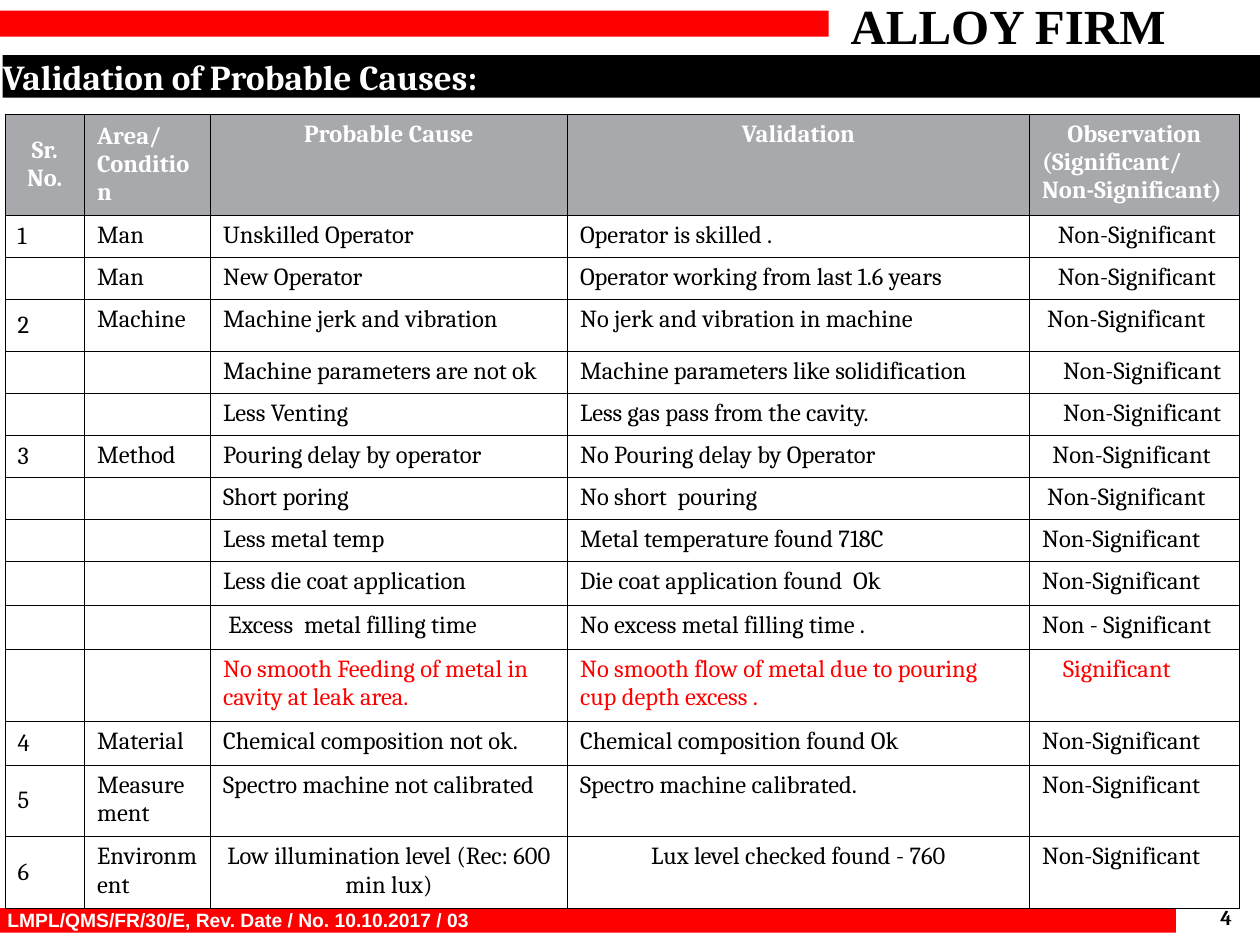
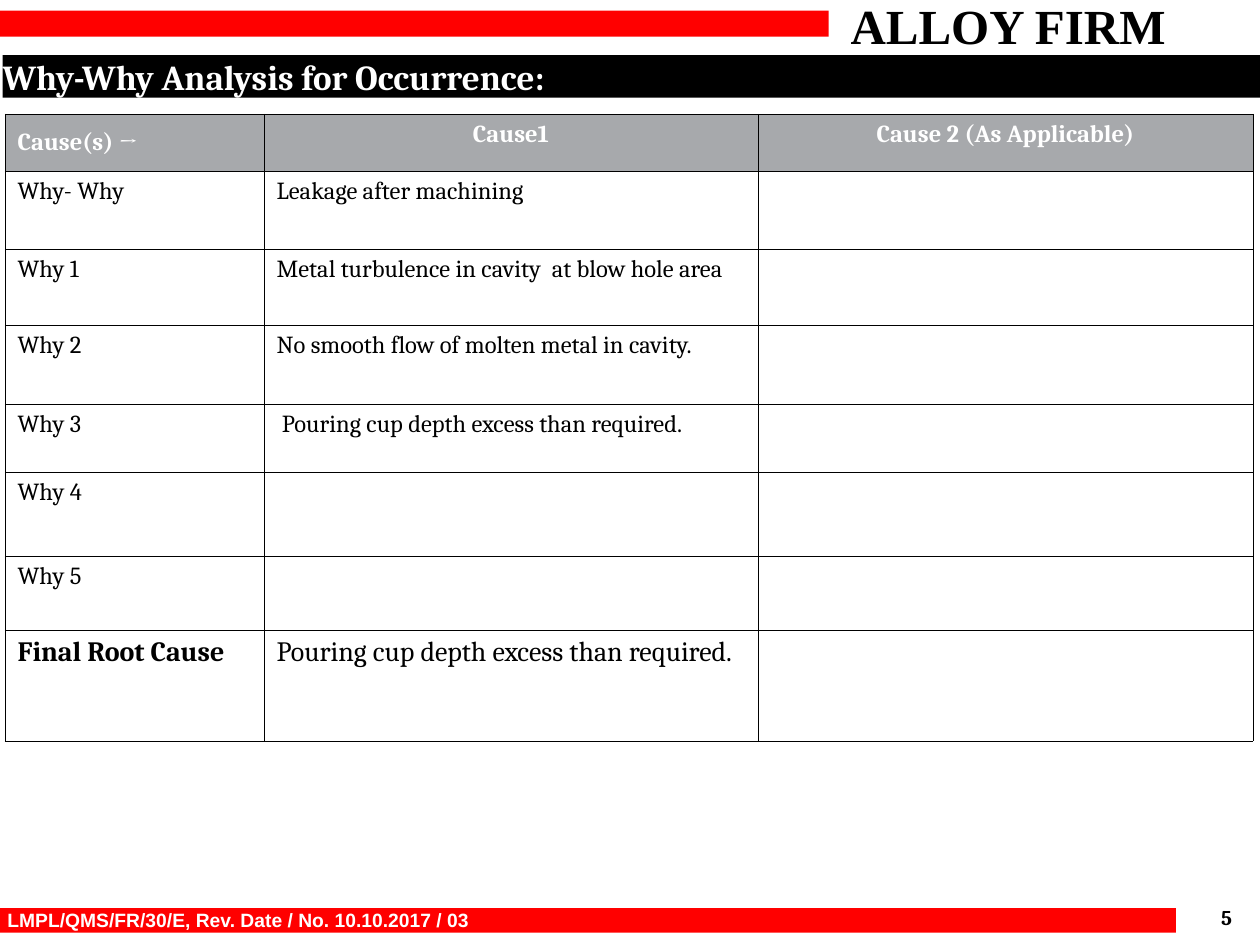
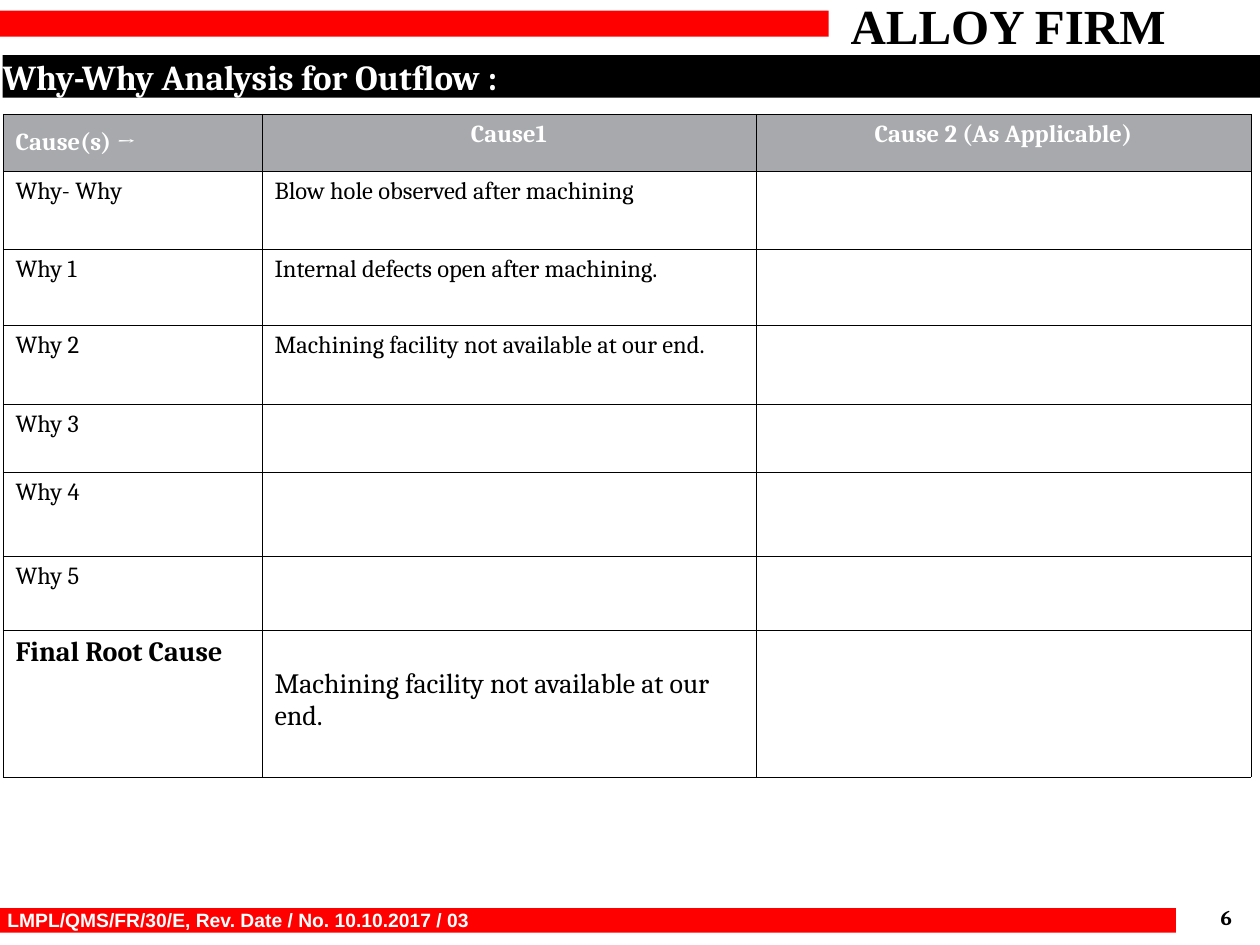
from dataclasses import dataclass
from functools import partial

from lxml.etree import SubElement
from pptx import Presentation
from pptx.dml.color import RGBColor
from pptx.enum.shapes import MSO_SHAPE
from pptx.enum.text import MSO_ANCHOR, PP_ALIGN
from pptx.oxml.ns import qn
from pptx.util import Pt


@dataclass(frozen=True)
class Theme:
    """Colours, fonts and type sizes shared by every slide."""
    red: str = "FF0000"
    black: str = "000000"
    white: str = "FFFFFF"
    grey: str = "A7A9AC"
    serif: str = "Cambria"
    sans: str = "Arial"
    brand_face: str = "Times New Roman"
    brand: float = 28
    title: float = 20
    root_cause: float = 16
    body: float = 14
    page: float = 12
    footer: float = 11
    rule: float = 0.25


THEME = Theme()


@dataclass(frozen=True)
class Box:
    """A region in points."""
    left: float
    top: float
    width: float
    height: float

    def inner(self, left, top, width, height):
        """Return the lengths of a part placed relative to this region."""
        return [Pt(v) for v in (self.left + left, self.top + top, width, height)]


@dataclass(frozen=True)
class Entry:
    """The content and format of one table cell."""
    text: str = ""
    size: float = THEME.body
    bold: bool = False
    color: str = THEME.black
    fill: str = THEME.white
    aligns: tuple = (PP_ALIGN.LEFT,)
    anchor: MSO_ANCHOR = MSO_ANCHOR.TOP
    indent: float = 0
    drop: float = 0


CENTER = (PP_ALIGN.CENTER,)
MIDDLE = MSO_ANCHOR.MIDDLE
Heading = partial(Entry, bold=True, color=THEME.white, fill=THEME.grey)
Alert = partial(Entry, color=THEME.red)

PAGE = Box(0, 0, 720, 540)
MASTHEAD = Box(0, 0, 720, 56)
FOOTER = Box(0, 515, 720, 25)
TABLE_TOP = 65.2

VALIDATION_COLUMNS = [45.4, 72, 204, 264, 120]
VALIDATION_HEIGHTS = [57.7, 24, 24, 29.7, *[24] * 5, 25.1, 25.1, 41.1, 25.1, 40.6, 41.1]
VALIDATION_HEADINGS = [
    Heading("Sr. No.", aligns=CENTER, anchor=MIDDLE),
    Heading("Area/Condition", anchor=MIDDLE),
    Heading("Probable Cause", aligns=CENTER),
    Heading("Validation", aligns=CENTER),
    Heading("Observation\n(Significant/\nNon-Significant)",
            aligns=(PP_ALIGN.CENTER, PP_ALIGN.LEFT)),
]
MINOR = "Non-Significant"
VALIDATIONS = [
    ("1", "Man", "Unskilled Operator", "Operator is skilled .", Entry(MINOR, indent=9)),
    ("", "Man", "New Operator", "Operator working from last 1.6 years", Entry(MINOR, indent=9)),
    ("2", "Machine", "Machine jerk and vibration", "No jerk and vibration in machine",
     Entry(MINOR, indent=3)),
    ("", "", "Machine parameters are not ok", "Machine parameters like solidification",
     Entry(MINOR, indent=12)),
    ("", "", "Less Venting", "Less gas pass from the cavity.", Entry(MINOR, indent=12)),
    ("3", "Method", "Pouring delay by operator", "No Pouring delay by Operator",
     Entry(MINOR, indent=6)),
    ("", "", "Short poring", "No short  pouring", Entry(MINOR, indent=3)),
    ("", "", "Less metal temp", "Metal temperature found 718C", MINOR),
    ("", "", "Less die coat application", "Die coat application found  Ok", MINOR),
    ("", "", Entry("Excess  metal filling time", indent=3), "No excess metal filling time .",
     "Non - Significant"),
    ("", "", Alert("No smooth Feeding of metal in cavity at leak area."),
     Alert("No smooth flow of metal due to pouring cup depth excess ."),
     Alert("Significant", indent=12)),
    ("4", "Material", "Chemical composition not ok.", "Chemical composition found Ok", MINOR),
    ("5", "Measurement", "Spectro machine not calibrated", "Spectro machine calibrated.", MINOR),
    ("6", "Environment", Entry("Low illumination level (Rec: 600 min lux)", aligns=CENTER),
     Entry("Lux level checked found - 760", aligns=CENTER), MINOR),
]

WHY_COLUMNS = [148, 282.3, 282.9]
WHY_HEIGHTS = [32.5, 44.6, 43.4, 45.1, 38.9, 48, 42.3]
WHY_HEADINGS = [
    Heading("Cause(s) →", anchor=MIDDLE),
    Heading("Cause1", aligns=CENTER),
    Heading("Cause 2 (As Applicable)", aligns=CENTER),
]
WHY_STEPS = ["Why- Why", *[f"Why {n}" for n in range(1, 6)]]
OCCURRENCE = [
    "Leakage after machining",
    "Metal turbulence in cavity  at blow hole area",
    "No smooth flow of molten metal in cavity.",
    Entry("Pouring cup depth excess than required.", indent=3),
    "",
    "",
    Entry("Pouring cup depth excess than required.", size=THEME.root_cause),
]
OUTFLOW = [
    "Blow hole observed after machining",
    "Internal defects open after machining.",
    "Machining facility not available at our end.",
    "",
    "",
    "",
    Entry("Machining facility not available at our end.", size=THEME.root_cause, drop=18.3),
]


def write(paragraph, text, size, color, face=THEME.serif, bold=True, align=PP_ALIGN.LEFT):
    """Put formatted text in a paragraph, or size the paragraph if it is empty."""
    paragraph.alignment = align
    if not text:
        SubElement(paragraph._p, qn("a:endParaRPr"), sz=str(int(size * 100)))
        return
    run = paragraph.add_run()
    run.text = text
    for name, value in {"size": Pt(size), "name": face, "bold": bold}.items():
        setattr(run.font, name, value)
    run.font.color.rgb = RGBColor.from_string(color)


def add_band(slide, place, color):
    """Add a plain filled band."""
    band = slide.shapes.add_shape(MSO_SHAPE.RECTANGLE, *place)
    band.shadow.inherit = False
    band.fill.solid()
    band.fill.fore_color.rgb = RGBColor.from_string(color)
    band.line.fill.background()
    return band


def set_frame(frame, inset=None, anchor=MSO_ANCHOR.TOP):
    """Set wrapping, anchor and optional equal insets, and return the first paragraph."""
    settings = {"word_wrap": True, "vertical_anchor": anchor}
    if inset is not None:
        settings |= {f"margin_{side}": Pt(inset) for side in ("left", "top", "right", "bottom")}
    for name, value in settings.items():
        setattr(frame, name, value)
    return frame.paragraphs[0]


def draw_masthead(slide, box, title):
    """Draw the company name, the red band and the title band."""
    company = slide.shapes.add_textbox(*box.inner(456, -5.8, 240, 42))
    write(set_frame(company.text_frame), "ALLOY FIRM", THEME.brand, THEME.black,
          THEME.brand_face, align=PP_ALIGN.CENTER)
    add_band(slide, box.inner(-0.5, 6, 474, 15), THEME.red)
    heading = add_band(slide, box.inner(1.5, 31.5, 718.5, 24.3), THEME.black)
    write(set_frame(heading.text_frame, 0, MIDDLE), title, THEME.title, THEME.white)


def draw_footer(slide, box, number):
    """Draw the red footer with the form reference and the page number."""
    add_band(slide, box.inner(0, 4, 672, 14), THEME.red)
    reference = slide.shapes.add_textbox(*box.inner(-2.9, 0.5, 647, 21))
    write(set_frame(reference.text_frame), "LMPL/QMS/FR/30/E, Rev. Date / No. 10.10.2017 / 03",
          THEME.footer, THEME.white, THEME.sans)
    page = slide.shapes.add_textbox(*box.inner(665, 2, 39, 14.4))
    write(set_frame(page.text_frame, 0), str(number), THEME.page, THEME.black,
          align=PP_ALIGN.RIGHT)


def rule_cell(cell):
    """Draw thin black borders around a cell."""
    properties = cell._tc.get_or_add_tcPr()
    for side in ("lnL", "lnR", "lnT", "lnB"):
        border = SubElement(properties, qn(f"a:{side}"), w=str(Pt(THEME.rule)))
        SubElement(SubElement(border, qn("a:solidFill")), qn("a:srgbClr"), val=THEME.black)


def fill_cell(cell, entry):
    """Write one entry into a table cell."""
    rule_cell(cell)
    cell.fill.solid()
    cell.fill.fore_color.rgb = RGBColor.from_string(entry.fill)
    settings = {
        "vertical_anchor": entry.anchor,
        "margin_left": Pt(7.2 + entry.indent),
        "margin_top": Pt(3.6 + entry.drop),
    }
    for name, value in settings.items():
        setattr(cell, name, value)
    for index, line in enumerate(entry.text.split("\n")):
        frame = cell.text_frame
        paragraph = frame.add_paragraph() if index else frame.paragraphs[0]
        align = entry.aligns[min(index, len(entry.aligns) - 1)]
        write(paragraph, line, entry.size, entry.color, bold=entry.bold, align=align)


def draw_table(slide, box, columns, heights, rows):
    """Draw a ruled table that fills the box."""
    place = box.inner(0, 0, box.width, box.height)
    table = slide.shapes.add_table(len(rows), len(columns), *place).table
    table.horz_banding = False
    for column, width in zip(table.columns, columns):
        column.width = Pt(width)
    for row, height, entries in zip(table.rows, heights, rows):
        row.height = Pt(height)
        for cell, entry in zip(row.cells, entries):
            fill_cell(cell, Entry(entry) if isinstance(entry, str) else entry)


def add_page(deck, number, title, left, columns, heights, rows):
    """Add a slide with masthead, table and footer."""
    slide = deck.slides.add_slide(deck.slide_layouts[6])
    draw_masthead(slide, MASTHEAD, title)
    draw_footer(slide, FOOTER, number)
    draw_table(slide, Box(left, TABLE_TOP, sum(columns), sum(heights)), columns, heights, rows)


def add_validation(deck, number):
    """Add the slide that validates the probable causes."""
    rows = [VALIDATION_HEADINGS]
    rows += [(Entry(serial, anchor=MIDDLE), *rest) for serial, *rest in VALIDATIONS]
    add_page(deck, number, "Validation of Probable Causes:", 2.9,
             VALIDATION_COLUMNS, VALIDATION_HEIGHTS, rows)


def add_why_why(deck, number, title, left, answers, root_height):
    """Add a why-why analysis slide that ends in the root cause."""
    steps = [*WHY_STEPS, Entry("Final Root Cause", size=THEME.root_cause, bold=True)]
    rows = [WHY_HEADINGS, *[(step, answer, "") for step, answer in zip(steps, answers)]]
    add_page(deck, number, title, left, WHY_COLUMNS, [*WHY_HEIGHTS, root_height], rows)


def main():
    """Build the three slides and save them."""
    deck = Presentation()
    deck.slide_width, deck.slide_height = Pt(PAGE.width), Pt(PAGE.height)
    add_validation(deck, 4)
    add_why_why(deck, 5, "Why-Why Analysis for Occurrence:", 2.9, OCCURRENCE, 63.4)
    add_why_why(deck, 6, "Why-Why Analysis for Outflow :", 1.7, OUTFLOW, 84)
    deck.save("out.pptx")


if __name__ == "__main__":
    main()
